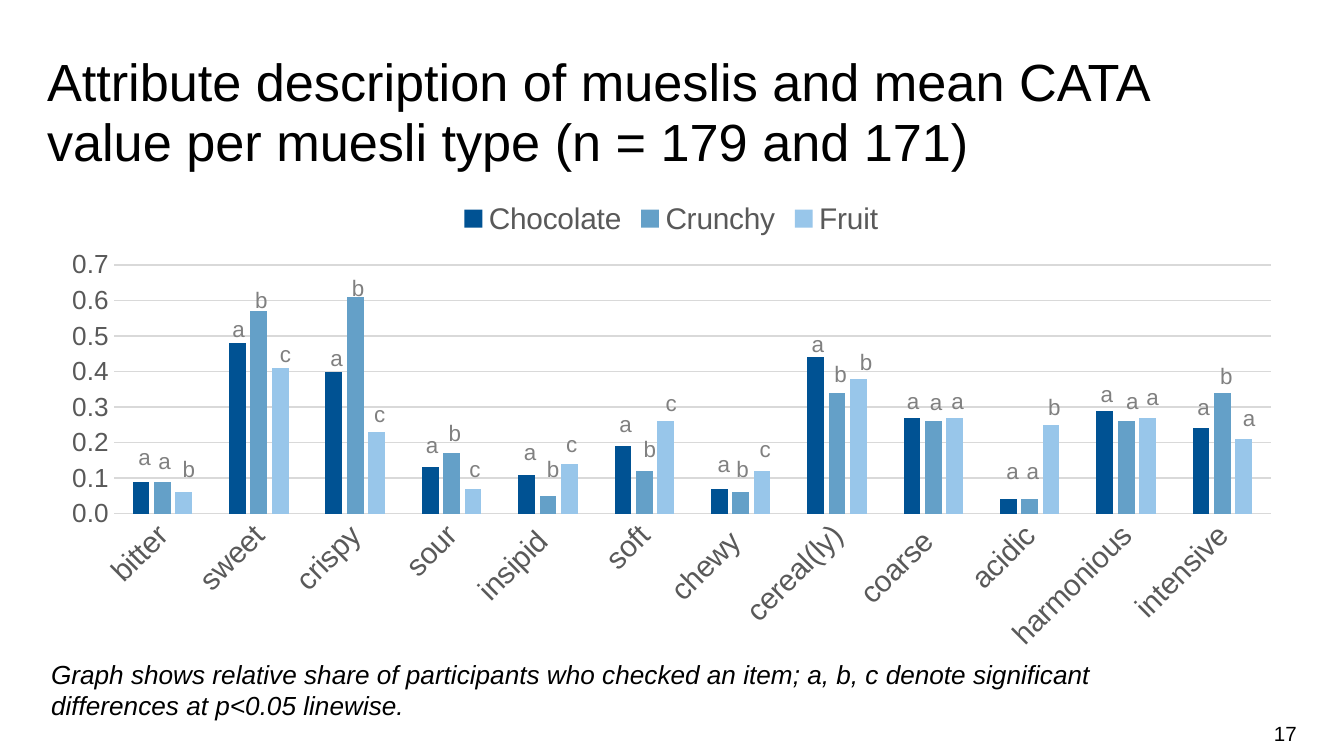
from pptx import Presentation
from pptx.chart.data import CategoryChartData
from pptx.dml.color import RGBColor
from pptx.enum.chart import XL_CHART_TYPE, XL_LEGEND_POSITION, XL_TICK_MARK
from pptx.enum.text import MSO_ANCHOR, MSO_AUTO_SIZE, PP_ALIGN
from pptx.util import Emu, Pt

COLUMNS = XL_CHART_TYPE.COLUMN_CLUSTERED
LEGEND_TOP = XL_LEGEND_POSITION.TOP
NO_TICK = XL_TICK_MARK.NONE
LEFT, CENTER, RIGHT = PP_ALIGN.LEFT, PP_ALIGN.CENTER, PP_ALIGN.RIGHT
TOP, MIDDLE = MSO_ANCHOR.TOP, MSO_ANCHOR.MIDDLE
NO_FIT = MSO_AUTO_SIZE.NONE

PX = 4572  # EMU per px, 200 px to the inch
FONT = "Arial"
COLORS = {
    "text": "000000", "axis": "595959", "grid": "D9D9D9", "letter": "808080",
    "Chocolate": "005293", "Crunchy": "64A0C8", "Fruit": "98C6EA",
}


def set_font(font, size, color, **extra):
    values = {"name": FONT, "size": Pt(size), **extra}
    for name, value in values.items():
        setattr(font, name, value)
    font.color.rgb = RGBColor.from_string(COLORS[color])


def add_text(text, box, size, color="text", align=LEFT, spacing=None, anchor=TOP, **extra):
    tf = s.shapes.add_textbox(*(Emu(v * PX) for v in box)).text_frame
    frame = {"word_wrap": True, "auto_size": NO_FIT, "vertical_anchor": anchor,
             "margin_left": 0, "margin_right": 0, "margin_top": 0, "margin_bottom": 0}
    for name, value in frame.items():
        setattr(tf, name, value)
    p = tf.paragraphs[0]
    p.alignment, p.line_spacing = align, spacing
    r = p.add_run()
    r.text = text
    set_font(r.font, size, color, **extra)


prs = Presentation()
prs.slide_width, prs.slide_height = Emu(2000 * PX), Emu(1125 * PX)
s = prs.slides.add_slide(prs.slide_layouts[6])

# Page number, note and title
add_text("17", (1482, 1062, 448, 60), 11, align=RIGHT, anchor=MIDDLE)
add_text("Graph shows relative share of participants who checked an item; "
         "a, b, c denote significant differences at p<0.05 linewise.",
         (76, 980, 1610, 94), 14, italic=True)
add_text("Attribute description of mueslis and mean CATA value per muesli type "
         "(n = 179 and 171)", (70, 78, 1650, 180), 28, spacing=Pt(32))

# Chart data
shares = {
    "Chocolate": [0.09, 0.48, 0.4, 0.13, 0.11, 0.19, 0.07, 0.44, 0.27, 0.04, 0.29, 0.24],
    "Crunchy": [0.09, 0.57, 0.61, 0.17, 0.05, 0.12, 0.06, 0.34, 0.26, 0.04, 0.26, 0.34],
    "Fruit": [0.06, 0.41, 0.23, 0.07, 0.14, 0.26, 0.12, 0.38, 0.27, 0.25, 0.27, 0.21],
}
data = CategoryChartData(number_format="0.00")
data.categories = ["bitter", "sweet", "crispy", "sour", "insipid ", "soft", "chewy ",
                   "cereal(ly)", "coarse ", "acidic", "harmonious", "intensive"]
for name, values in shares.items():
    data.add_series(name, values)

# Column chart
box = (Emu(v * PX) for v in (70, 278, 1858, 704))
chart = s.shapes.add_chart(COLUMNS, *box, data).chart
set_font(chart.font, 14, "text")
chart.has_title = False
chart.has_legend = True
chart.legend.position = LEGEND_TOP
chart.legend.include_in_layout = False
set_font(chart.legend.font, 16, "axis")

plot = chart.plots[0]
plot.vary_by_categories = False
plot.gap_width, plot.overlap = 219, -27
for series in plot.series:
    series.format.fill.solid()
    series.format.fill.fore_color.rgb = RGBColor.from_string(COLORS[series.name])

# Axes
cat_axis, val_axis = chart.category_axis, chart.value_axis
for axis, size in ((cat_axis, 16), (val_axis, 14)):
    axis.major_tick_mark = axis.minor_tick_mark = NO_TICK
    set_font(axis.tick_labels.font, size, "axis")
cat_axis._element.txPr.bodyPr.set("rot", "-2700000")
val_axis.minimum_scale, val_axis.maximum_scale, val_axis.major_unit = 0, 0.7, 0.1
val_axis.tick_labels.number_format = "#,##0.0"
val_axis.tick_labels.number_format_is_linked = False
val_axis.format.line.fill.background()
for line in (cat_axis.format.line, val_axis.major_gridlines.format.line):
    line.width = Pt(0.75)
    line.color.rgb = RGBColor.from_string(COLORS["grid"])

# Significance letters above the columns: letters, lefts and tops by series
letter_rows = [
    ("aaaaaaaaaaaa",
     [198, 338, 484, 626, 772, 914, 1060, 1200, 1342, 1490, 1630, 1774],
     [654, 464, 506, 636, 646, 604, 664, 486, 570, 674, 560, 580]),
    ("abbbbbbbaaab",
     [228, 372, 516, 660, 806, 950, 1088, 1234, 1376, 1520, 1668, 1808],
     [660, 420, 402, 618, 672, 642, 672, 530, 572, 674, 570, 534]),
    ("bccccccbabaa",
     [264, 408, 548, 690, 834, 982, 1122, 1272, 1408, 1552, 1698, 1842],
     [672, 500, 590, 672, 634, 574, 642, 512, 570, 580, 564, 596]),
]
for row in letter_rows:
    for letter, left, top in zip(*row):
        add_text(letter, (left, top, 34, 42), 12, "letter", CENTER, 1.14)

prs.save("out.pptx")
